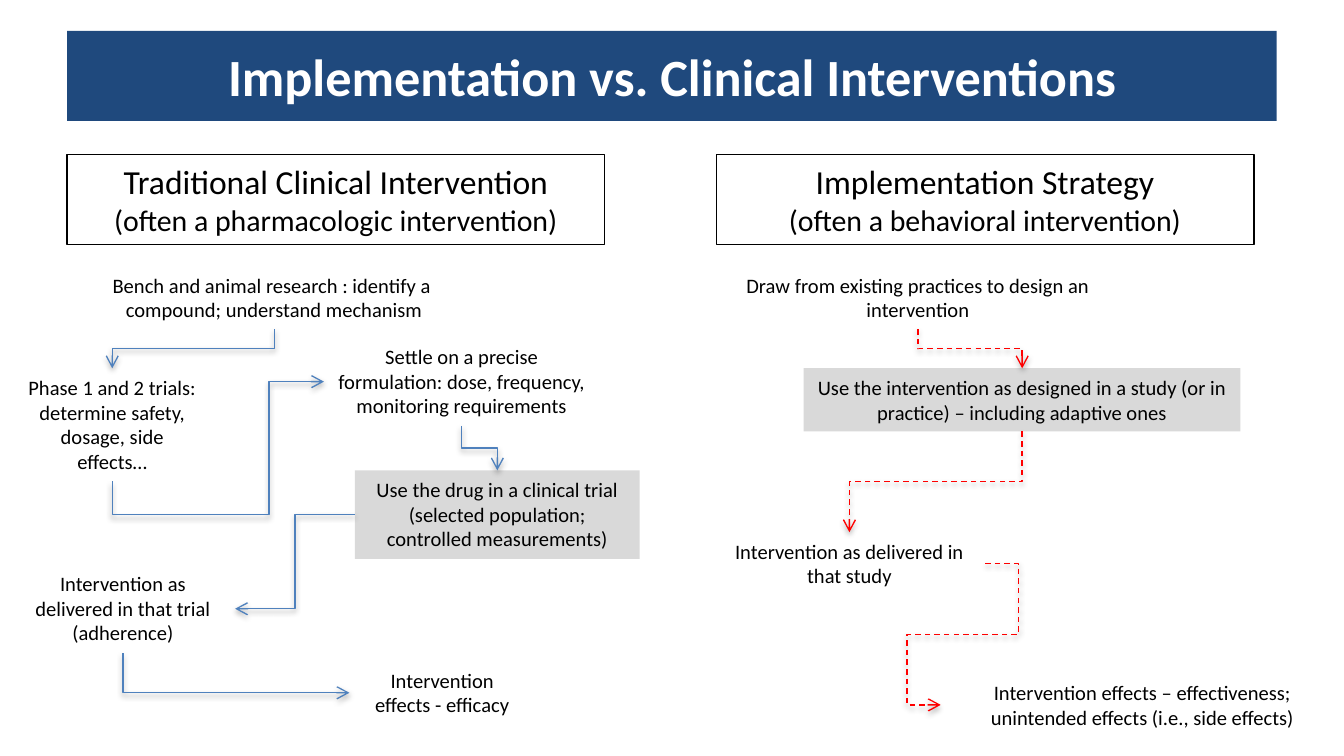
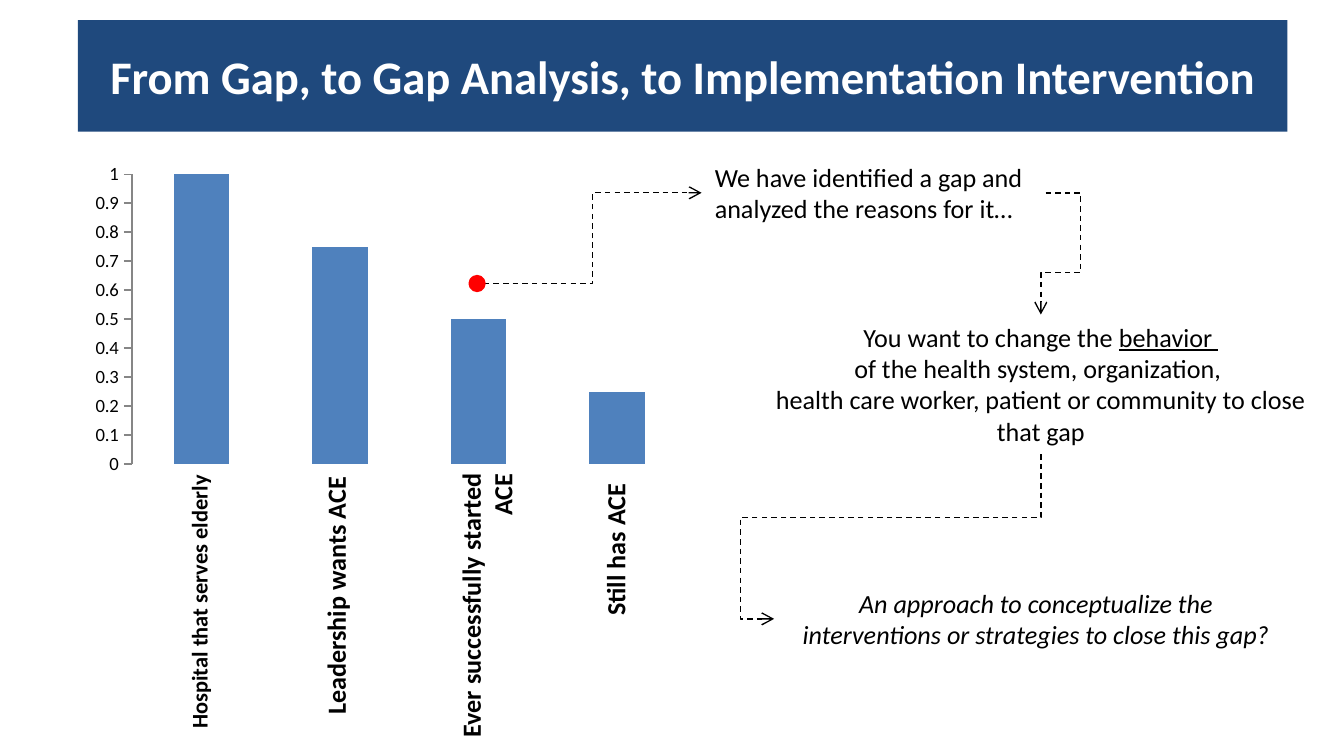
from lxml import etree
from pptx import Presentation
from pptx import util as u
from pptx.chart.data import CategoryChartData
from pptx.dml.color import RGBColor
from pptx.enum import chart as charts, dml, shapes, text
from pptx.oxml.ns import qn

# Theme
THEME = {
    "font": "Calibri",
    "navy": "1F497D", "blue": "4F81BD", "red": "FF0000", "grey": "D9D9D9",
    "axis": "868686", "black": "000000", "white": "FFFFFF",
    "title": 28, "long_title": 25,
    "step": 11, "head": 18, "subhead": 16, "note": 14, "small": 12, "axis_size": 10,
    "line": 0.75,
}

# Grid: 100 columns across the slide, square cells
WIDTH = u.Inches(10)
HEIGHT = WIDTH * 9 // 16
CELL = WIDTH // 100

# Content: boxes are (left, top, width, height) in cells
TITLES = [
    ("Implementation vs. Clinical Interventions", (5, 2.3, 90, 6.7), "title"),
    ("From Gap, to Gap Analysis, to Implementation Intervention", (5.8, 1.5, 90, 8.3), "long_title"),
]

HEADINGS = [
    ("Traditional Clinical Intervention", "(often a pharmacologic intervention)", 5),
    ("Implementation Strategy", "(often a behavioral intervention)", 53.3),
]

# name: (box, paragraphs, format)
SHADED = {"fill": "grey"}
STEPS = {
    "bench": ((3.3, 19.8, 34.2, 4.7),
              ["Bench and animal research : identify a ", "compound; understand mechanism"], {}),
    "phases": ((0.8, 27.4, 15.1, 8.4),
               ["Phase 1 and 2 trials: determine safety, dosage, side effects…"], {}),
    "formulation": ((24.1, 25.1, 20.5, 6.6),
                    ["Settle on a precise formulation: dose, frequency, monitoring requirements"], {}),
    "trial": ((26.4, 35, 21.2, 6.6),
              ["Use the drug in a clinical trial (selected population; controlled measurements)"], SHADED),
    "adherence": ((0.8, 42, 16.7, 6.6),
                  ["Intervention as delivered in that trial (adherence)"], {}),
    "efficacy": ((26, 49.2, 13.8, 4.7), ["Intervention effects - efficacy"], {}),
    "design": ((53.3, 19.8, 30, 4.7),
               ["Draw from existing practices to design an intervention"], {}),
    "study": ((59.8, 27.4, 32.5, 4.7),
              ["Use the intervention as designed in a study (or in practice) – including adaptive ones"], SHADED),
    "delivered": ((53.1, 39.6, 20.2, 4.7), ["Intervention as delivered in that study"], {}),
    "effectiveness": ((70, 50.1, 30, 4.7),
                      ["Intervention effects – effectiveness; unintended effects (i.e., side effects)"], {}),
}

# (start, side, end, side, turns); no turns means the shortest elbow
CLINICAL_ARROWS = [
    ("bench", "bottom", "phases", "top", []),
    ("phases", "bottom", "formulation", "left", [38.3, 20]),
    ("formulation", "bottom", "trial", "top", []),
    ("trial", "left", "adherence", "right", []),
    ("adherence", "bottom", "efficacy", "left", []),
]
STRATEGY_ARROWS = [
    ("design", "bottom", "study", "top", []),
    ("study", "bottom", "delivered", "top", []),
    ("delivered", "right", "effectiveness", "left", [75.8, 47.2, 67.5]),
]

NOTES = {
    "gap": ((52.2, 11.5, 25.6, 5.7),
            ["We have identified a gap and", "analyzed the reasons for it…"],
            {"align": "LEFT", "wrap": False}),
    "behavior": ((56.3, 23.4, 42.3, 10.4),
                 [[("You want to change the ", {}), ("behavior ", {"underline": True})],
                  "of the health system, organization, ",
                  "health care worker, patient or community to close that gap"], {}),
    "approach": ((57.6, 43.2, 39, 5.7),
                 ["An approach to conceptualize the interventions or strategies to close this gap?"],
                 {"italic": True}),
}
GAP_DOT = (35, 20.6, 1, 1)
GAP_ARROWS = [
    ("dot", "right", "gap", "left", []),
    ("gap", "right", "behavior", "top", [80.4, 20.3]),
    ("behavior", "bottom", "approach", "left", [38.5, 55.1]),
]

CHART_BOX = (6.2, 11.7, 45.8, 24.1)
CHART_VALUES = [1, 0.75, 0.5, 0.25]
BAR_LABELS = [
    ((4.1, 43.2, 21.4, 3), ["Hospital that serves elderly "], "small"),
    ((15.1, 42.7, 19.8, 3.4), ["Leadership wants ACE"], "note"),
    ((25.3, 42.3, 21.8, 5.7), ["Ever successfully started", "ACE"], "note"),
    ((39.8, 39.3, 12, 3.4), ["Still has ACE"], "note"),
]


def color(name):
    return RGBColor.from_string(THEME[name])


def cells(*lengths):
    return [u.Emu(round(length * CELL)) for length in lengths]


def write(frame, paragraphs, size, ink="black", align="CENTER", anchor="TOP",
          wrap=True, grow=True, **style):
    """Fill a frame; a paragraph is a string or a list of (text, style) runs."""
    frame.word_wrap = wrap
    frame.vertical_anchor = getattr(text.MSO_ANCHOR, anchor)
    frame.auto_size = (text.MSO_AUTO_SIZE.SHAPE_TO_FIT_TEXT if grow
                       else text.MSO_AUTO_SIZE.NONE)
    for number, content in enumerate(paragraphs):
        line = frame.paragraphs[0] if number == 0 else frame.add_paragraph()
        line.alignment = getattr(text.PP_ALIGN, align)
        for words, own in [(content, {})] if isinstance(content, str) else content:
            run = line.add_run()
            run.text = words
            run.font.name = THEME["font"]
            run.font.color.rgb = color(ink)
            for key, value in {"size": u.Pt(size), **style, **own}.items():
                setattr(run.font, key, value)


def add_box(slide, box, fill=None, line=None, width=THEME["line"], kind="RECTANGLE"):
    shape = slide.shapes.add_shape(getattr(shapes.MSO_SHAPE, kind), *cells(*box))
    shape.shadow.inherit = False
    if fill:
        shape.fill.solid()
        shape.fill.fore_color.rgb = color(fill)
    else:
        shape.fill.background()
    if line:
        shape.line.color.rgb = color(line)
        shape.line.width = u.Pt(width)
    else:
        shape.line.fill.background()
    return shape


def add_text(slide, box, paragraphs, size, fill=None, rotation=0, **style):
    shape = add_box(slide, box, fill) if fill else slide.shapes.add_textbox(*cells(*box))
    write(shape.text_frame, paragraphs, size, **style)
    shape.rotation = rotation


def port(box, side):
    left, top, width, height = box
    across, down = {"left": (0, 0.5), "right": (1, 0.5),
                    "top": (0.5, 0), "bottom": (0.5, 1)}[side]
    return left + across * width, top + down * height


def add_arrow(slide, start, end, first, last, turns, ink, dashed, shadow):
    """Elbow arrow; axis 0 is horizontal, turns alternate from the first axis."""
    delta = [end[0] - start[0], end[1] - start[1]]
    if not turns and first == last:
        turns = [start[first] + delta[first] / 2]
    bends = []
    for number, turn in enumerate(turns):
        axis = (first + number) % 2
        bends.append((turn - start[axis]) / delta[axis])

    # An arrow that leaves vertically is a turned horizontal one
    width, height = abs(delta[first]), abs(delta[1 - first])
    left = (start[0] + end[0] - width) / 2
    top = (start[1] + end[1] - height) / 2
    if first == 0:
        turned, flips = 0, (delta[0] < 0, delta[1] < 0)
    elif min(delta) > 0:
        turned, flips = 270, (True, False)
    else:
        turned, flips = 90, (delta[1] < 0, delta[0] > 0)

    arrow = slide.shapes.add_connector(
        shapes.MSO_CONNECTOR.ELBOW, *cells(left, top, left + width, top + height))
    arrow.line.color.rgb = color(ink)
    arrow.line.width = u.Pt(THEME["line"])
    if dashed:
        arrow.line.dash_style = dml.MSO_LINE.DASH
    props = arrow._element.spPr
    frame = props.find(qn("a:xfrm"))
    frame.set("rot", str(turned * 60000))
    for key, flip in zip(("flipH", "flipV"), flips):
        frame.set(key, str(int(flip)))
    geometry = props.find(qn("a:prstGeom"))
    geometry.set("prst", f"bentConnector{len(bends) + 2}")
    for number, bend in enumerate(bends, 1):
        etree.SubElement(geometry.find(qn("a:avLst")), qn("a:gd"),
                         name=f"adj{number}", fmla=f"val {round(bend * 100000)}")
    etree.SubElement(props.find(qn("a:ln")), qn("a:tailEnd"), type="arrow")
    effects = etree.SubElement(props, qn("a:effectLst"))
    if shadow:
        cast = etree.SubElement(effects, qn("a:outerShdw"), blurRad=str(u.Pt(3.1)),
                                dist=str(u.Pt(1.6)), dir="5400000", rotWithShape="0")
        shade = etree.SubElement(cast, qn("a:srgbClr"), val=THEME["black"])
        etree.SubElement(shade, qn("a:alpha"), val="38000")


def add_arrows(slide, boxes, arrows, ink, dashed=True, shadow=False):
    vertical = ("top", "bottom")
    for start, leaving, end, arriving, turns in arrows:
        add_arrow(slide, port(boxes[start], leaving), port(boxes[end], arriving),
                  int(leaving in vertical), int(arriving in vertical),
                  turns, ink, dashed, shadow)


def add_slide(deck, title, box, size):
    slide = deck.slides.add_slide(deck.slide_layouts[6])
    band = add_box(slide, box, "navy")
    write(band.text_frame, [title], THEME[size], ink="white", anchor="MIDDLE",
          grow=False, bold=True)
    return slide


def add_bars(slide):
    data = CategoryChartData()
    data.categories = [str(number + 1) for number in range(len(CHART_VALUES))]
    data.add_series("Series 1", CHART_VALUES)
    chart = slide.shapes.add_chart(charts.XL_CHART_TYPE.COLUMN_CLUSTERED,
                                   *cells(*CHART_BOX), data).chart
    chart.has_legend = chart.has_title = False
    chart.font.name = THEME["font"]
    chart.font.size = u.Pt(THEME["axis_size"])
    chart.font.color.rgb = color("black")
    chart.category_axis.visible = False
    scale = chart.value_axis
    scale.has_major_gridlines = False
    scale.minimum_scale, scale.maximum_scale, scale.major_unit = 0, 1, 0.1
    scale.major_tick_mark = charts.XL_TICK_MARK.OUTSIDE
    scale.format.line.color.rgb = color("axis")
    bars = chart.plots[0]
    bars.gap_width = 150
    bars.vary_by_categories = False
    bars.series[0].format.fill.solid()
    bars.series[0].format.fill.fore_color.rgb = color("blue")


def build_comparison(deck):
    slide = add_slide(deck, *TITLES[0])
    for heading, detail, left in HEADINGS:
        frame = add_box(slide, (left, 11.5, 40, 6.7), line="black").text_frame
        write(frame, [heading, [(detail, {"size": u.Pt(THEME["subhead"])})]], THEME["head"])
    for box, paragraphs, style in STEPS.values():
        add_text(slide, box, paragraphs, THEME["step"], **style)
    boxes = {name: step[0] for name, step in STEPS.items()}
    add_arrows(slide, boxes, CLINICAL_ARROWS, "blue", dashed=False, shadow=True)
    add_arrows(slide, boxes, STRATEGY_ARROWS, "red", shadow=True)


def build_gap(deck):
    slide = add_slide(deck, *TITLES[1])
    for box, paragraphs, style in NOTES.values():
        add_text(slide, box, paragraphs, THEME["note"], **style)
    for box, paragraphs, size in BAR_LABELS:
        add_text(slide, box, paragraphs, THEME[size], rotation=270,
                 align="RIGHT", wrap=False, bold=True)
    add_bars(slide)
    boxes = {name: note[0] for name, note in NOTES.items()}
    add_arrows(slide, {**boxes, "dot": GAP_DOT}, GAP_ARROWS, "black")
    add_box(slide, GAP_DOT, "red", "red", width=2, kind="OVAL")


def main():
    deck = Presentation()
    deck.slide_width, deck.slide_height = WIDTH, HEIGHT
    build_comparison(deck)
    build_gap(deck)
    deck.save("out.pptx")


if __name__ == "__main__":
    main()
